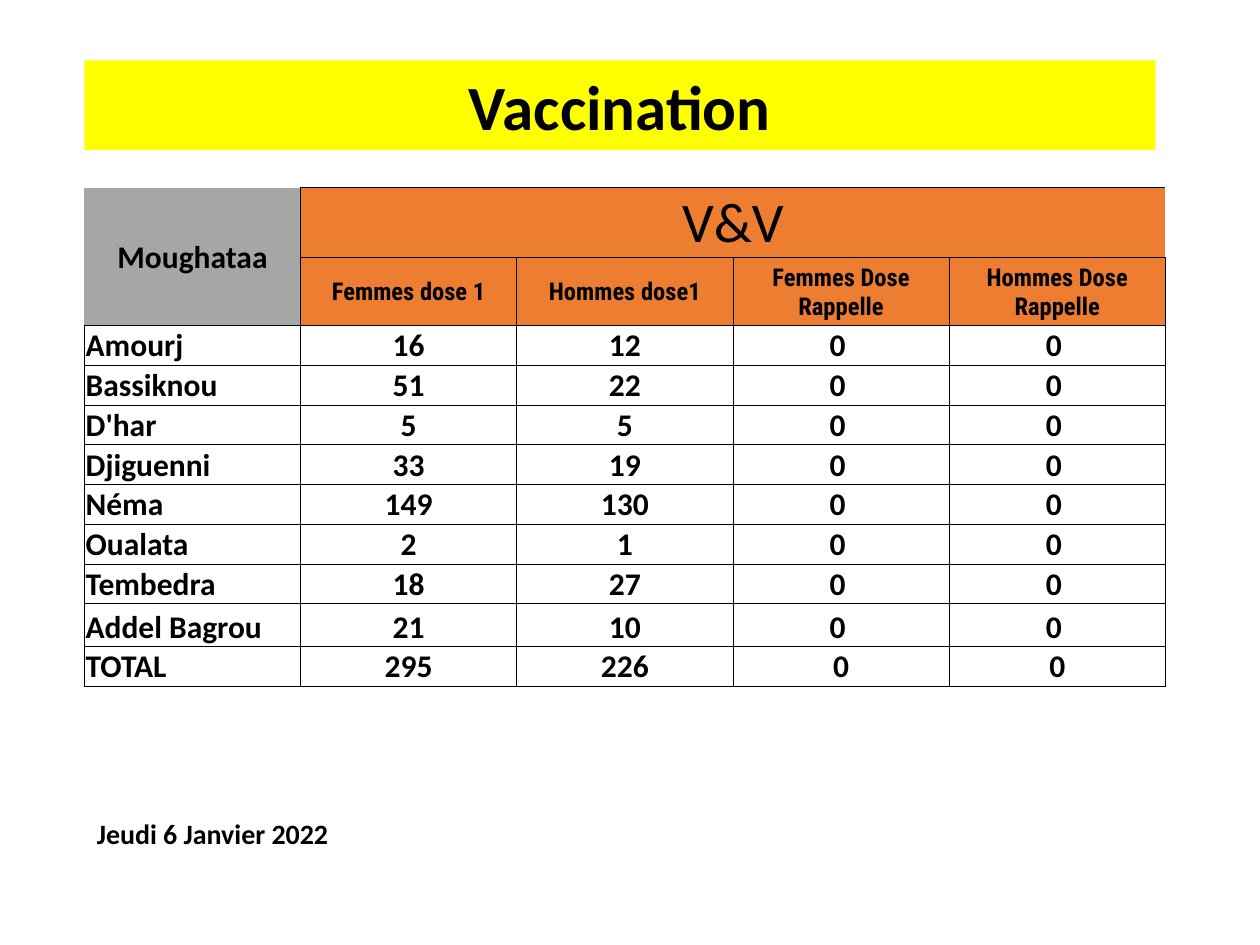
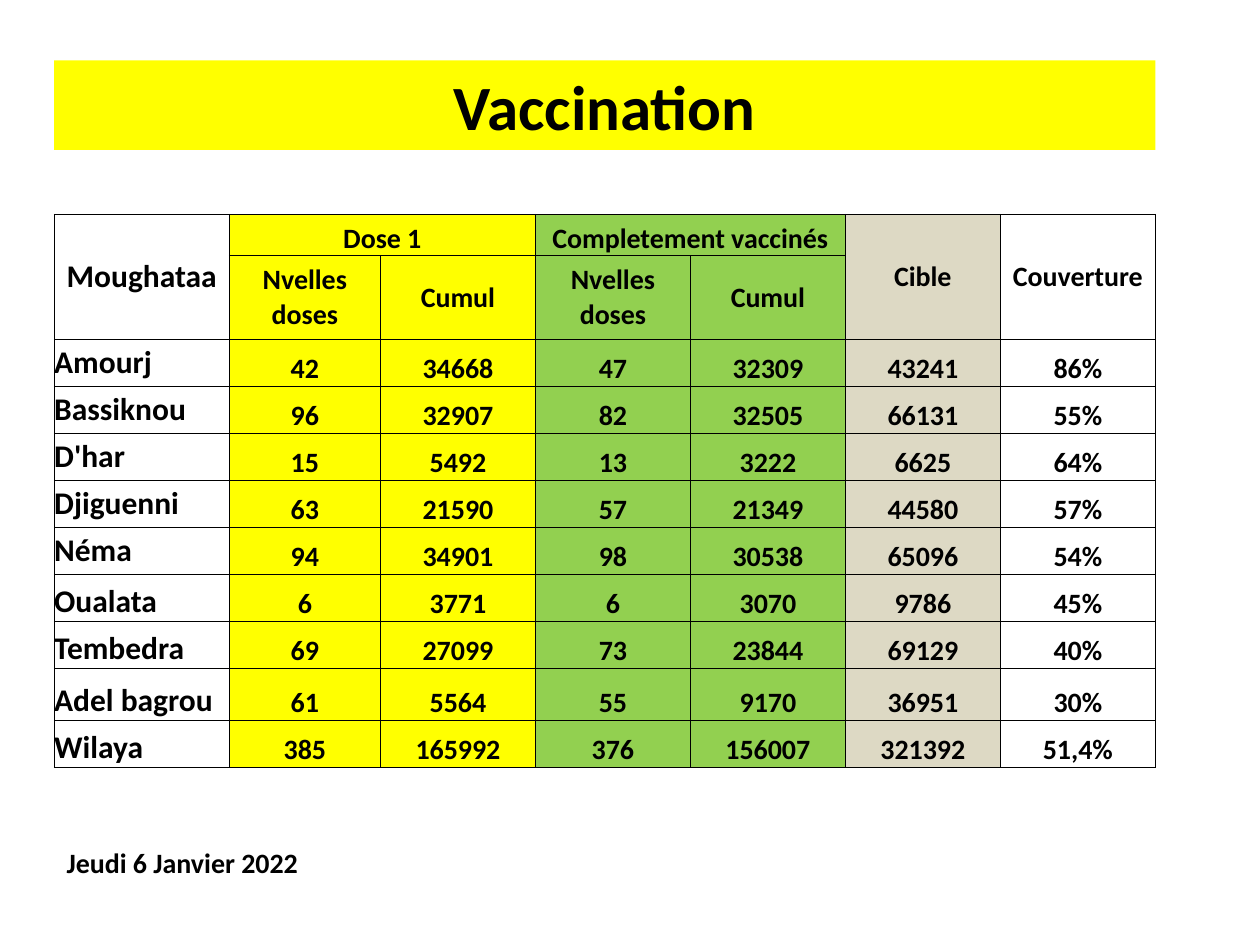
from dataclasses import dataclass
from typing import Optional

from lxml.etree import SubElement
from pptx import Presentation
from pptx.dml.color import RGBColor
from pptx.enum.shapes import MSO_SHAPE
from pptx.enum.text import MSO_ANCHOR, MSO_AUTO_SIZE, PP_ALIGN
from pptx.oxml.ns import qn
from pptx.util import Inches, Pt

SLIDE_WIDTH = Inches(10)
SLIDE_HEIGHT = Inches(7.5)
COLUMN = SLIDE_WIDTH / 100
ROW = SLIDE_HEIGHT / 75

BLACK = RGBColor(0x00, 0x00, 0x00)
YELLOW = RGBColor(0xFF, 0xFF, 0x00)
GREY = RGBColor(0xA6, 0xA6, 0xA6)
ORANGE = RGBColor(0xED, 0x7D, 0x31)
GREEN = RGBColor(0x92, 0xD0, 0x50)
SAND = RGBColor(0xDD, 0xD9, 0xC4)

BODY_FONT = "Calibri"
DOSE_FONT = "Roboto Condensed"
NAME_SIZE = 18
RIGHT_EDGE = 91.7
MIDDLE = MSO_ANCHOR.MIDDLE
BOTTOM = MSO_ANCHOR.BOTTOM

DAILY_DOSES = [
    ("Amourj", "16", "12", "0 ", "0 "),
    ("Bassiknou", "51", "22", "0 ", "0 "),
    ("D'har", "5", "5", "0 ", "0 "),
    ("Djiguenni", "33", "19", "0 ", "0 "),
    ("Néma", "149", "130", "0 ", "0 "),
    ("Oualata", "2", "1", "0 ", "0 "),
    ("Tembedra", "18", "27", "0 ", "0 "),
    ("Addel Bagrou", "21", "10", "0 ", "0 "),
    ("TOTAL", "295", "226", "0", "0"),
]
COVERAGE = [
    ("Amourj", "42", "34668", "47", "32309", "43241", "86%"),
    ("Bassiknou", "96", "32907", "82", "32505", "66131", "55%"),
    ("D'har", "15", "5492", "13", "3222", "6625", "64%"),
    ("Djiguenni", "63", "21590", "57", "21349", "44580", "57%"),
    ("Néma", "94", "34901", "98", "30538", "65096", "54%"),
    ("Oualata", "6", "3771", "6", "3070", "9786", "45%"),
    ("Tembedra", "69", "27099", "73", "23844", "69129", "40%"),
    ("Adel bagrou", "61", "5564", "55", "9170", "36951", "30%"),
    ("Wilaya", "385", "165992", "376", "156007", "321392", "51,4%"),
]


@dataclass
class Box:
    left: float
    top: float
    width: float
    height: float

    def emu(self):
        return (int(self.left * COLUMN), int(self.top * ROW),
                int(self.width * COLUMN), int(self.height * ROW))


@dataclass
class Heading:
    row: int
    column: int
    text: str
    fill: Optional[RGBColor] = None
    rows: int = 1
    columns: int = 1
    size: int = 16
    font: str = BODY_FONT
    bold: bool = True
    anchor: MSO_ANCHOR = MIDDLE
    open_edges: str = ""


def write(frame, text, size, align, font=BODY_FONT, bold=True):
    paragraph = frame.paragraphs[0]
    paragraph.alignment = align
    run = paragraph.add_run()
    run.text = text
    run.font.name = font
    run.font.size = Pt(size)
    run.font.bold = bold
    run.font.color.rgb = BLACK


def style_cell(cell, fill, inset, open_edges=""):
    cell.margin_left = cell.margin_right = cell.margin_top = Inches(inset)
    cell.margin_bottom = 0
    if fill is None:
        cell.fill.background()
    else:
        cell.fill.solid()
        cell.fill.fore_color.rgb = fill
    properties = cell._tc.get_or_add_tcPr()
    for position, edge in enumerate("LRTB"):
        line = SubElement(properties, qn(f"a:ln{edge}"), w=str(Pt(0.5)))
        if edge in open_edges:
            SubElement(line, qn("a:noFill"))
        else:
            solid = SubElement(line, qn("a:solidFill"))
            SubElement(solid, qn("a:srgbClr"), val=str(BLACK))
        properties.insert(position, line)


def add_title(slide, box):
    band = slide.shapes.add_shape(MSO_SHAPE.RECTANGLE, *box.emu())
    band.shadow.inherit = False
    band.fill.solid()
    band.fill.fore_color.rgb = YELLOW
    band.line.fill.background()
    band.text_frame.word_wrap = True
    write(band.text_frame, "Vaccination", 36, PP_ALIGN.CENTER)


def add_date(slide, box):
    frame = slide.shapes.add_textbox(*box.emu()).text_frame
    frame.word_wrap = True
    frame.auto_size = MSO_AUTO_SIZE.SHAPE_TO_FIT_TEXT
    write(frame, "Jeudi 6 Janvier 2022", 16, PP_ALIGN.LEFT)


def add_heading(table, heading, inset):
    rows = range(heading.row, heading.row + heading.rows)
    columns = range(heading.column, heading.column + heading.columns)
    for row in rows:
        for column in columns:
            style_cell(table.cell(row, column), heading.fill, inset, heading.open_edges)
    first = table.cell(heading.row, heading.column)
    if heading.rows * heading.columns > 1:
        first.merge(table.cell(rows[-1], columns[-1]))
    first.vertical_anchor = heading.anchor
    write(first.text_frame, heading.text, heading.size, PP_ALIGN.CENTER,
          heading.font, heading.bold)


def add_doses_table(slide, box, widths, heights, headings, records,
                    fills, value_size, inset=0, middle_names=0):
    left, top, width, height = box.emu()
    table = slide.shapes.add_table(len(heights), len(widths), left, top, width, height).table
    table.first_row = table.horz_banding = False
    for column, share in zip(table.columns, widths):
        column.width = int(width * share / sum(widths))
    for row, share in zip(table.rows, heights):
        row.height = int(height * share / sum(heights))

    for heading in headings:
        add_heading(table, heading, inset)

    first_record = len(heights) - len(records)
    for index, record in enumerate(records):
        for column, (text, fill) in enumerate(zip(record, fills)):
            is_name = column == 0
            cell = table.cell(first_record + index, column)
            style_cell(cell, fill, inset)
            cell.vertical_anchor = MIDDLE if is_name and index < middle_names else BOTTOM
            write(cell.text_frame, text, NAME_SIZE if is_name else value_size,
                  PP_ALIGN.LEFT if is_name else PP_ALIGN.CENTER)


def add_vaccination_slide(deck, left, date_top, table_box, **table_content):
    slide = deck.slides.add_slide(deck.slide_layouts[6])
    add_doses_table(slide, table_box, **table_content)
    add_date(slide, Box(left, date_top, 55.9, 3.7))
    add_title(slide, Box(left, 4.8, RIGHT_EDGE - left, 7.1))


def add_daily_slide(deck):
    doses = ["Femmes dose 1", "Hommes dose1", "Femmes Dose Rappelle", "Hommes Dose Rappelle"]
    headings = [
        Heading(0, 0, "Moughataa", GREY, rows=2, size=NAME_SIZE, open_edges="LT"),
        Heading(0, 1, "V&V", ORANGE, columns=4, size=32, bold=False, open_edges="R"),
    ]
    headings += [Heading(1, column, dose, ORANGE, size=14, font=DOSE_FONT)
                 for column, dose in enumerate(doses, 1)]
    add_vaccination_slide(
        deck, 6.7, 64.3, Box(6.7, 14.9, 85.8, 38.6),
        widths=[1] * 5, heights=[5, 5.4] + [3.1] * 7 + [3.4, 3.1],
        headings=headings, records=DAILY_DOSES, fills=[None] * 5,
        value_size=18, inset=0.01)


def add_coverage_slide(deck):
    headings = [
        Heading(0, 0, "Moughataa", rows=2, size=NAME_SIZE),
        Heading(0, 5, "Cible", SAND, rows=2),
        Heading(0, 6, "Couverture", rows=2),
    ]
    groups = [(1, "Dose 1", YELLOW), (3, "Completement vaccinés", GREEN)]
    for column, group, fill in groups:
        headings += [
            Heading(0, column, group, fill, columns=2, anchor=BOTTOM),
            Heading(1, column, "Nvelles doses", fill),
            Heading(1, column + 1, "Cumul", fill),
        ]
    add_vaccination_slide(
        deck, 4.3, 66.6, Box(4.3, 17, 87.4, 43.9),
        widths=[13.9, 12] + [12.3] * 5, heights=[3.3, 6.6] + [3.73] * 7 + [4.1, 3.73],
        headings=headings, records=COVERAGE,
        fills=[None, YELLOW, YELLOW, GREEN, GREEN, SAND, None],
        value_size=16, middle_names=5)


def main():
    deck = Presentation()
    deck.slide_width = SLIDE_WIDTH
    deck.slide_height = SLIDE_HEIGHT
    add_daily_slide(deck)
    add_coverage_slide(deck)
    deck.save("out.pptx")


if __name__ == "__main__":
    main()
